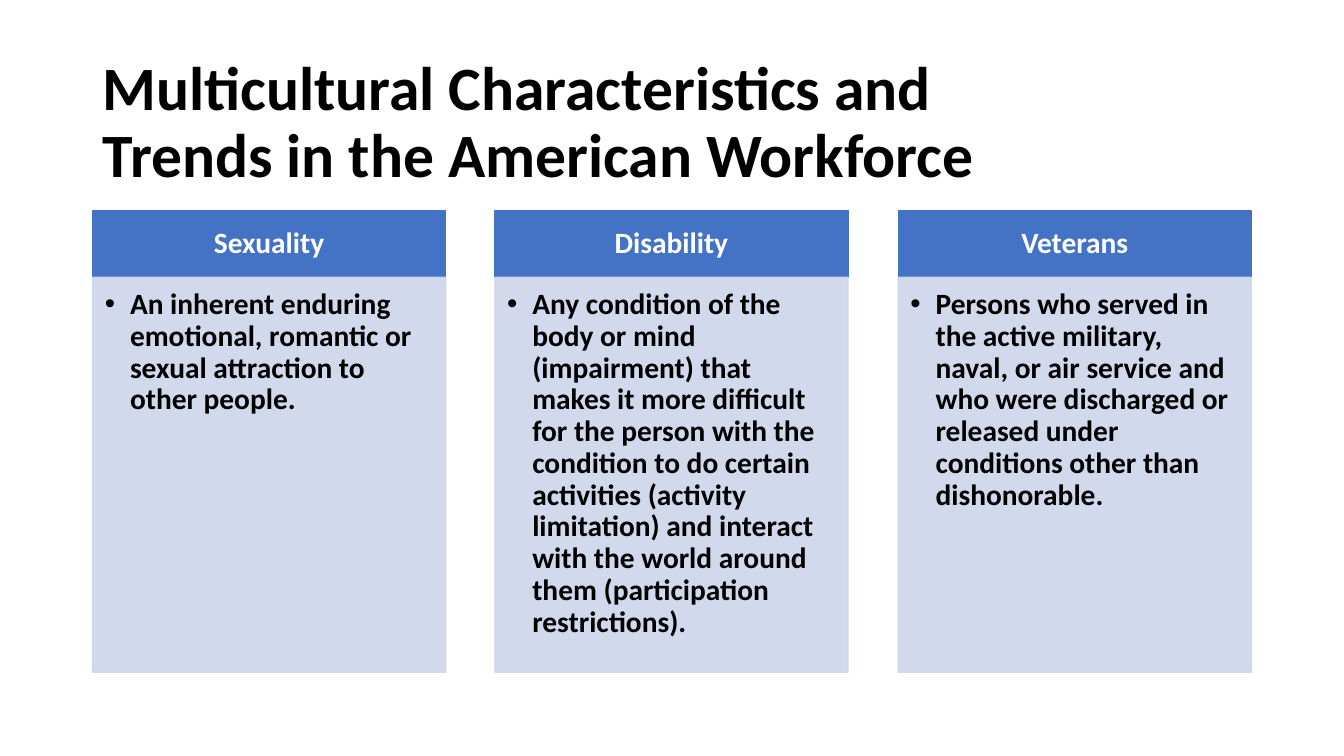
from dataclasses import dataclass

from lxml.etree import SubElement
from pptx import Presentation
from pptx.dml.color import RGBColor
from pptx.enum.shapes import MSO_SHAPE
from pptx.enum.text import MSO_ANCHOR, PP_ALIGN
from pptx.oxml.ns import qn
from pptx.util import Pt

PX = 9144


@dataclass(frozen=True)
class Theme:
    font: str = "Calibri"
    ink: str = "000000"
    header_ink: str = "FFFFFF"
    header_fill: str = "4472C4"
    body_fill: str = "CFD5EA"
    title_size: int = 44
    text_size: int = 21
    line_spacing: float = 0.9


class Deck:
    def __init__(self, prs, theme):
        self.theme = theme
        self.s = prs.slides.add_slide(prs.slide_layouts[6])

    def set_text(self, sp, text, size, color, anchor, align, insets):
        tf = sp.text_frame
        left, top, right, bottom = (v * PX for v in insets)
        frame = {"word_wrap": True, "vertical_anchor": anchor, "margin_left": left,
                 "margin_top": top, "margin_right": right, "margin_bottom": bottom}
        for name, value in frame.items():
            setattr(tf, name, value)
        p = tf.paragraphs[0]
        p.text = text
        p.alignment = align
        p.line_spacing = self.theme.line_spacing
        for r in p.runs:
            for name, value in {"name": self.theme.font, "size": Pt(size), "bold": True}.items():
                setattr(r.font, name, value)
            r.font.color.rgb = RGBColor.from_string(color)
        return p

    def title(self, box, text):
        sp = self.s.shapes.add_textbox(*(v * PX for v in box))
        self.set_text(sp, text, self.theme.title_size, self.theme.ink,
                      MSO_ANCHOR.MIDDLE, PP_ALIGN.LEFT, (10, 5, 10, 5))

    def rect(self, box, color, opacity=100):
        sp = self.s.shapes.add_shape(MSO_SHAPE.RECTANGLE, *(v * PX for v in box))
        sp.shadow.inherit = False
        sp.fill.solid()
        sp.line.width = Pt(1)
        for paint in (sp.fill.fore_color, sp.line.color):
            paint.rgb = RGBColor.from_string(color)
        if opacity < 100:
            for clr in sp.element.spPr.iter(qn("a:srgbClr")):
                SubElement(clr, qn("a:alpha"), val=str(opacity * 1000))
        return sp

    def header(self, box, text):
        sp = self.rect(box, self.theme.header_fill)
        self.set_text(sp, text, self.theme.text_size, self.theme.header_ink,
                      MSO_ANCHOR.MIDDLE, PP_ALIGN.CENTER, (16, 9, 16, 9))

    def body(self, box, text):
        sp = self.rect(box, self.theme.body_fill, 90)
        p = self.set_text(sp, text, self.theme.text_size, self.theme.ink,
                          MSO_ANCHOR.TOP, PP_ALIGN.LEFT, (12, 12, 16, 18))
        pPr = p._p.get_or_add_pPr()
        for name, value in {"marL": 25, "indent": -25}.items():
            pPr.set(name, str(value * PX))
        SubElement(pPr, qn("a:buFont"), typeface="Arial")
        SubElement(pPr, qn("a:buChar"), char="•")


COLUMNS = [
    ("Sexuality", "An inherent enduring emotional, romantic or sexual attraction to other people."),
    ("Disability", "Any condition of the body or mind (impairment) that makes it more difficult "
                   "for the person with the condition to do certain activities (activity "
                   "limitation) and interact with the world around them (participation "
                   "restrictions)."),
    ("Veterans", "Persons who served in the active military, naval, or air service and who were "
                 "discharged or released under conditions other than dishonorable."),
]


def main():
    prs = Presentation()
    prs.slide_width, prs.slide_height = 1333 * PX, 750 * PX
    deck = Deck(prs, Theme())
    deck.title((92, 61, 1150, 124),
               "Multicultural Characteristics and\nTrends in the American Workforce")
    left, top, width, header_h, body_h = 92, 209, 350, 66, 392
    for i, (heading, text) in enumerate(COLUMNS):
        x = left + i * 799 // 2
        deck.header((x, top, width, header_h), heading)
        deck.body((x, top + header_h, width, body_h), text)
    prs.save("out.pptx")


if __name__ == "__main__":
    main()
